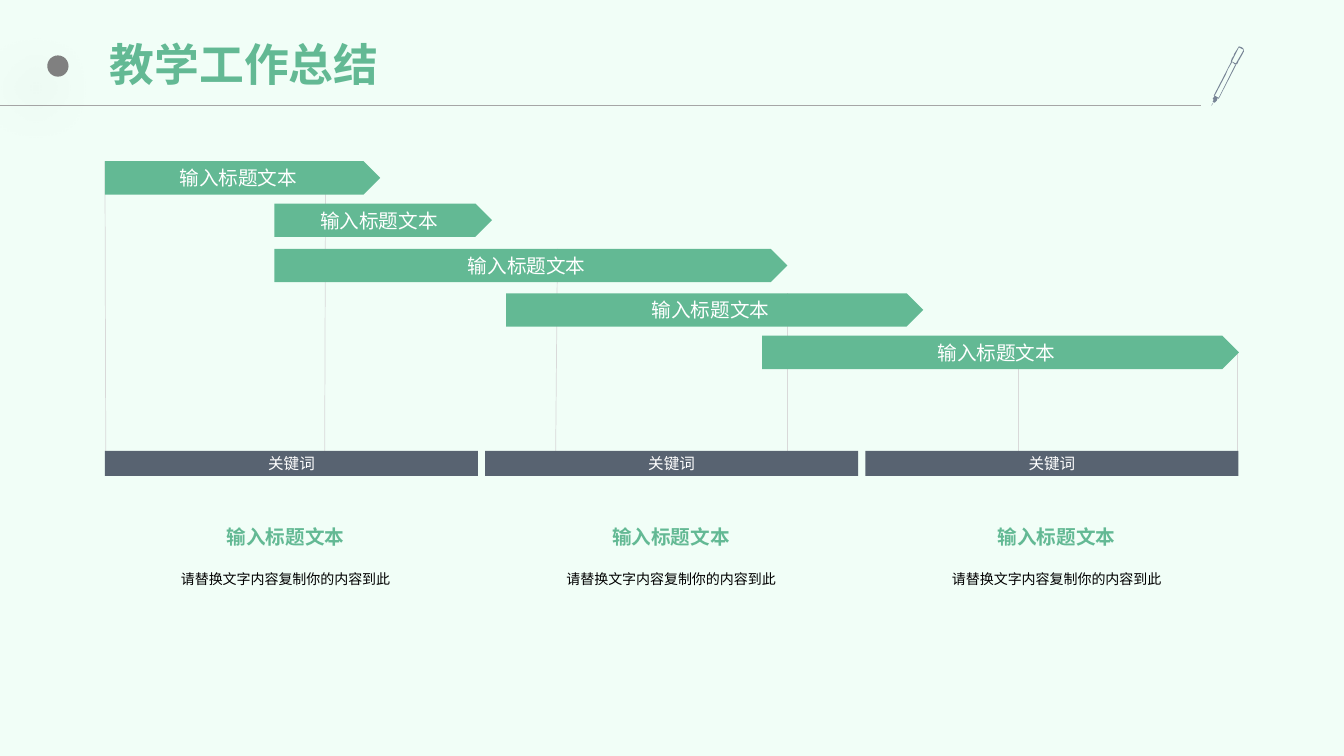
from dataclasses import dataclass

from lxml import etree
from pptx import Presentation
from pptx.dml.color import RGBColor
from pptx.enum.shapes import MSO_CONNECTOR, MSO_SHAPE
from pptx.enum.text import MSO_ANCHOR, MSO_AUTO_SIZE, PP_ALIGN
from pptx.oxml import parse_xml
from pptx.oxml.ns import nsdecls, qn
from pptx.util import Pt


@dataclass(frozen=True)
class Theme:
    page: str = "F1FEF7"
    green: str = "63B994"
    slate: str = "586371"
    pen: str = "778495"
    dot: str = "808080"
    rule: str = "A6A6A6"
    guide: str = "D9D9D9"
    white: str = "FFFFFF"
    black: str = "000000"
    latin: str = "Arial"
    cjk: str = "Noto Sans CJK SC"
    title: float = 32
    label: float = 14
    keyword: float = 11.1
    body: float = 10


T = Theme()
LABEL = "输入标题文本"
KEYWORD = "关键词"
BODY = "请替换文字内容复制你的内容到此"

# Bars: left, top, width inside the timeline box
BARS = [(0, 0, 196.6), (121, 30.2, 155.5), (121, 62.6, 366.5),
        (286.5, 94.3, 298), (469.4, 124.6, 340.6)]
# Guides: start x, start y, end x, end y inside the timeline box
GUIDES = [(809.2, 137, 809.2, 219), (0, 0, 0.6, 219.6), (157.6, 0, 156.9, 219.6),
          (323.2, 62.6, 321.8, 219.6), (487.4, 94.3, 487.4, 223), (652.2, 132.5, 652.2, 223)]
# Pen contours on a grid whose unit is 0.72 pt: silhouette, barrel, cap
PEN_UNIT = Pt(0.72)
PEN = [
    [(32, 3), (31, 2), (30, 1), (27, 0), (22, 8), (22, 9), (20, 12), (19, 15), (19, 16),
     (2, 49), (3, 49), (1, 52), (2, 53), (1, 55), (2, 55), (0, 58), (0, 59), (2, 55),
     (3, 56), (4, 55), (5, 54), (6, 51), (7, 52), (24, 19), (24, 18), (25, 18), (30, 8),
     (31, 6), (26, 15), (26, 16), (32, 5), (32, 4)],
    [(23, 19), (7, 51), (3, 49), (14, 28), (16, 23), (20, 16), (21, 16), (23, 18), (24, 18)],
    [(24, 17), (20, 15), (27, 1), (31, 3), (32, 3)],
]


def add_text(p, text, size, color, bold=False, latin=T.latin):
    r = p.add_run()
    r.text = text
    r.font.size, r.font.bold, r.font.name = Pt(size), bold, latin
    r.font.color.rgb = RGBColor.from_string(color)
    ea = etree.SubElement(r.font._element, qn("a:ea"))
    ea.set("typeface", T.cjk)


def paint(sp, color):
    sp.shadow.inherit = False
    sp.fill.solid()
    sp.fill.fore_color.rgb = RGBColor.from_string(color)
    sp.line.fill.background()


def add_line(s, x1, y1, x2, y2, color, width):
    line = s.shapes.add_connector(MSO_CONNECTOR.STRAIGHT, Pt(x1), Pt(y1), Pt(x2), Pt(y2))
    line.line.color.rgb = RGBColor.from_string(color)
    line.line.width = Pt(width)
    etree.SubElement(line._element.spPr, qn("a:effectLst"))


def add_block(s, kind, x, y, w, h, fill, text, size):
    sp = s.shapes.add_shape(kind, Pt(x), Pt(y), Pt(w), Pt(h))
    paint(sp, fill)
    tf = sp.text_frame
    tf.word_wrap, tf.vertical_anchor = False, MSO_ANCHOR.MIDDLE
    p = tf.paragraphs[0]
    p.alignment = PP_ALIGN.CENTER
    add_text(p, text, size, T.white)


def add_caption_line(shapes, x, y, w, h, bottom=0):
    """Add an empty centred text box and return its paragraph."""
    tf = shapes.add_textbox(Pt(x), Pt(y), Pt(w), Pt(h)).text_frame
    tf.word_wrap, tf.vertical_anchor = True, MSO_ANCHOR.MIDDLE
    tf.margin_left = tf.margin_right = tf.margin_top = 0
    tf.margin_bottom = Pt(bottom)
    p = tf.paragraphs[0]
    p.alignment = PP_ALIGN.CENTER
    return p


def add_pen(s, x, y):
    outline, *holes = PEN
    fb = s.shapes.build_freeform(*outline[0], scale=PEN_UNIT)
    fb.add_line_segments(outline[1:], close=True)
    for hole in holes:
        fb.move_to(*hole[0])
        fb.add_line_segments(hole[1:], close=True)
    paint(fb.convert_to_shape(Pt(x), Pt(y)), T.pen)


def add_dot(s, x, y, d):
    dot = s.shapes.add_shape(MSO_SHAPE.OVAL, Pt(x), Pt(y), Pt(d), Pt(d))
    paint(dot, T.dot)
    dot._element.spPr.find(qn("a:effectLst")).append(parse_xml(
        f'<a:outerShdw {nsdecls("a")} blurRad="{Pt(40)}" dist="{Pt(22)}" dir="8100000" '
        f'algn="tr" rotWithShape="0"><a:srgbClr val="{T.black}"><a:alpha val="15000"/>'
        '</a:srgbClr></a:outerShdw>'))


def add_header(s, x, y, w, h):
    title = s.shapes.title
    title.left, title.top, title.width, title.height = Pt(x + 73.4), Pt(y + 13.7), Pt(785.5), Pt(67.7)
    tf = title.text_frame
    tf.auto_size, tf.vertical_anchor = MSO_AUTO_SIZE.NONE, MSO_ANCHOR.MIDDLE
    tf.margin_left = tf.margin_right = Pt(5)
    tf.margin_top = tf.margin_bottom = Pt(2.9)
    p = tf.paragraphs[0]
    p.alignment, p.line_spacing = PP_ALIGN.LEFT, 0.9
    add_text(p, "教学工作总结", T.title, T.green, bold=True, latin=T.cjk)
    add_line(s, x, y + h, x + w, y + h, T.rule, 0.75)
    add_dot(s, x + 33.8, y + 39.6, 15.2)
    add_pen(s, x + w + 7.5, y + 33.1)


def add_timeline(s, x, y, w, h):
    for x1, y1, x2, y2 in GUIDES:
        add_line(s, x + x1, y + y1, x + x2, y + y2, T.guide, 0.5)
    key_w, key_h = 266.4, 18
    pitch = (w - key_w) / 2
    for i in range(3):
        add_block(s, MSO_SHAPE.RECTANGLE, x + i * pitch, y + h - key_h, key_w, key_h,
                  T.slate, KEYWORD, T.keyword)
    for left, top, width in BARS:
        add_block(s, MSO_SHAPE.PENTAGON, x + left, y + top, width, 23.8,
                  T.green, LABEL, T.label)


def add_captions(s, x, y, w, h):
    col_w, head_h = 257.8, 22.4
    pitch = (w - col_w) / 2
    for i in range(3):
        shapes = s.shapes.add_group_shape().shapes
        left = x + i * pitch
        p = add_caption_line(shapes, left, y, col_w, head_h)
        add_text(p, LABEL, T.label, T.green, bold=True)
        p = add_caption_line(shapes, left, y + head_h, col_w, h - head_h, bottom=10)
        p.line_spacing = 1.2
        add_text(p, BODY, T.body, T.black)


def main():
    prs = Presentation()
    prs.slide_width, prs.slide_height = Pt(960), Pt(540)
    s = prs.slides.add_slide(prs.slide_layouts[5])
    s.background.fill.solid()
    s.background.fill.fore_color.rgb = RGBColor.from_string(T.page)
    add_header(s, 0, 0, 858, 75.4)
    add_timeline(s, 75, 115.2, 809.6, 224.8)
    add_captions(s, 75, 372.2, 808.6, 67.8)
    prs.save("out.pptx")


if __name__ == "__main__":
    main()
